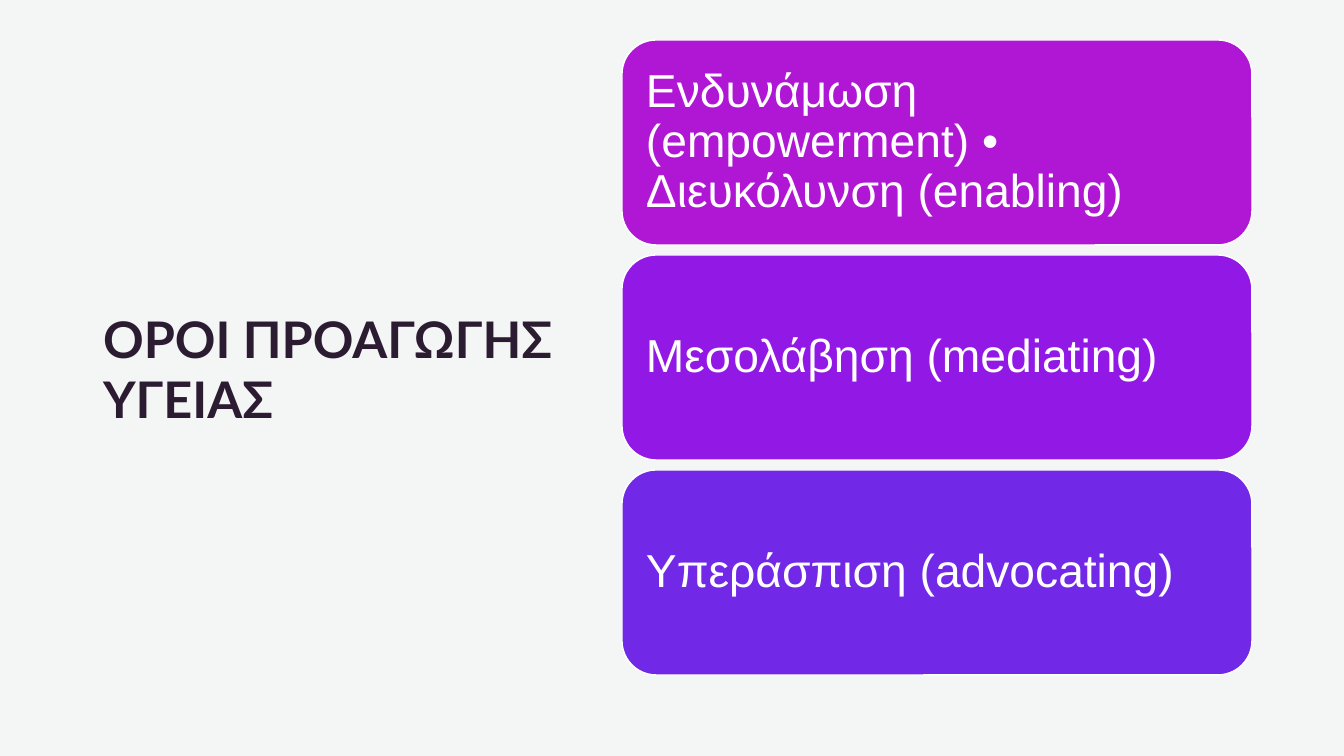
from pptx import Presentation
from pptx.dml.color import RGBColor
from pptx.enum.shapes import MSO_SHAPE
from pptx.enum.text import MSO_ANCHOR, MSO_AUTO_SIZE, PP_ALIGN
from pptx.util import Pt

EMU_PER_PX = 914400 / 100.8
PAGE_SIZE = (1344, 756)
TITLE_BOX = (93, 61, 484, 615)
TERMS_BOX = (622, 40, 630, 635)
CARD_GAP = 10
CARD_INSET = 14
TERMS = [
    ("Ενδυνάμωση (empowerment) • Διευκόλυνση (enabling)", "AF17D5"),
    ("Μεσολάβηση (mediating)", "9219E5"),
    ("Υπεράσπιση (advocating)", "7229E7"),
]
TITLE_FONT = {"name": "Lato", "size": Pt(36), "bold": True}
CARD_FONT = {"name": "Arial", "size": Pt(33), "bold": False}


def px(length):
    return round(length * EMU_PER_PX)


def paint(fill, color):
    fill.solid()
    fill.fore_color.rgb = RGBColor.from_string(color)


def apply(target, values):
    for name, value in values.items():
        setattr(target, name, value)


def write(frame, text, font, color, line_spacing):
    apply(frame, {
        "word_wrap": True,
        "auto_size": MSO_AUTO_SIZE.NONE,
        "vertical_anchor": MSO_ANCHOR.MIDDLE,
    })
    para = frame.paragraphs[0]
    apply(para, {"alignment": PP_ALIGN.LEFT, "line_spacing": line_spacing})
    span = para.add_run()
    span.text = text
    apply(span.font, font)
    paint(span.font.fill, color)


def add_title(page, box):
    title = page.shapes.title
    apply(title, dict(zip(("left", "top", "width", "height"), map(px, box))))
    write(title.text_frame, "ΟΡΟΙ ΠΡΟΑΓΩΓΗΣ ΥΓΕΙΑΣ", TITLE_FONT, "2C1C31", 1.0)


def add_terms(page, box):
    left, top, width, height = box
    card_height = (height - CARD_GAP * (len(TERMS) - 1)) / len(TERMS)
    for index, (text, color) in enumerate(TERMS):
        card_top = top + index * (card_height + CARD_GAP)
        card = page.shapes.add_shape(
            MSO_SHAPE.ROUNDED_RECTANGLE,
            px(left), px(card_top), px(width), px(card_height))
        card.shadow.inherit = False
        paint(card.fill, color)
        paint(card.line.fill, "FFFFFF")
        card.line.width = Pt(1)
        sides = ("margin_left", "margin_top", "margin_right", "margin_bottom")
        apply(card.text_frame, dict.fromkeys(sides, px(CARD_INSET)))
        write(card.text_frame, text, CARD_FONT, "FFFFFF", 0.9)


def main():
    deck = Presentation()
    deck.slide_width, deck.slide_height = map(px, PAGE_SIZE)
    page = deck.slides.add_slide(deck.slide_layouts[5])
    paint(page.background.fill, "F4F6F5")
    add_title(page, TITLE_BOX)
    add_terms(page, TERMS_BOX)
    deck.save("out.pptx")


if __name__ == "__main__":
    main()
